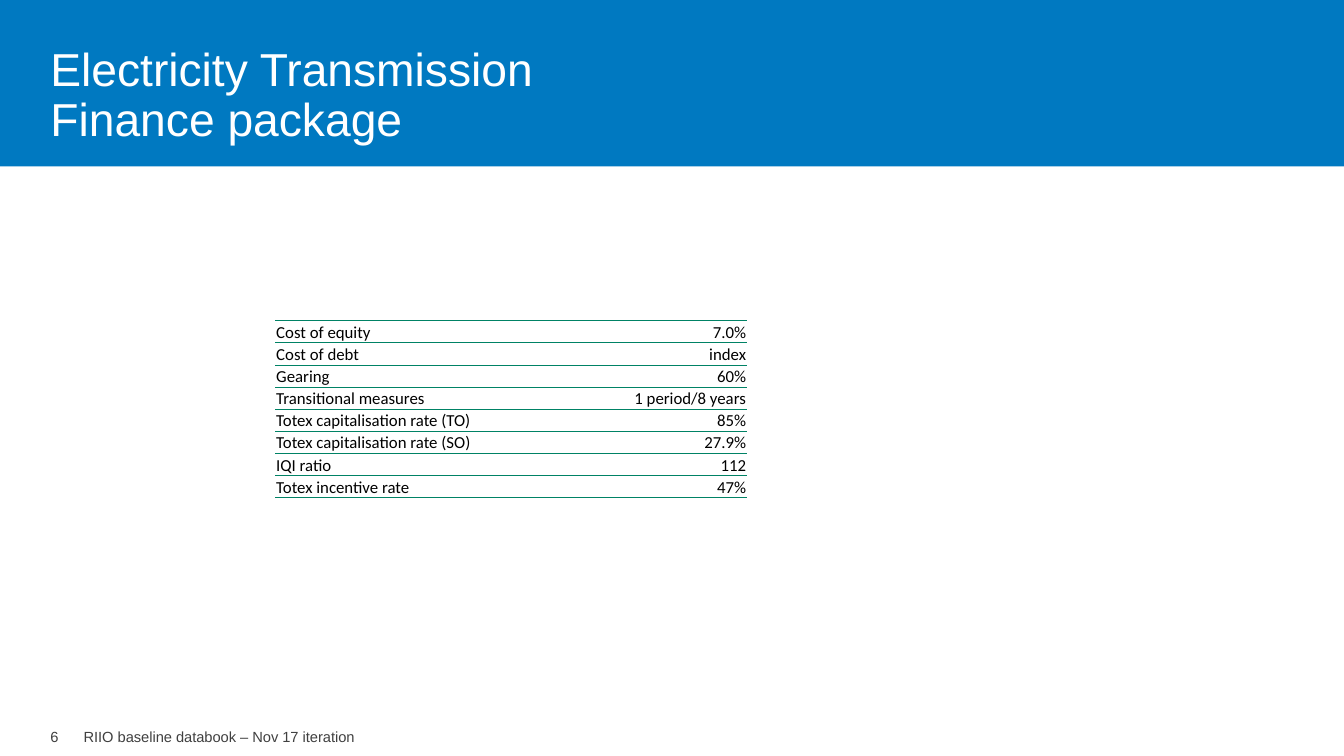
from dataclasses import dataclass

from lxml.etree import SubElement
from pptx import Presentation
from pptx.dml.color import RGBColor
from pptx.enum.shapes import MSO_SHAPE
from pptx.enum.text import MSO_ANCHOR, MSO_AUTO_SIZE, PP_ALIGN
from pptx.oxml.ns import qn
from pptx.shapes.autoshape import Shape
from pptx.slide import Slide
from pptx.table import _Cell as Cell
from pptx.text.text import TextFrame
from pptx.util import Inches, Pt

BLUE = RGBColor(0x00, 0x79, 0xC1)
GREEN = RGBColor(0x00, 0x82, 0x65)
GREY = RGBColor(0x40, 0x40, 0x40)
BLACK = RGBColor(0x00, 0x00, 0x00)
WHITE = RGBColor(0xFF, 0xFF, 0xFF)

SLIDE_WIDTH = 13.33
ROW_HEIGHT = 0.22
COLUMN_WIDTHS = (3.17, 1.51)


@dataclass
class Measure:
    """One line of the finance package."""
    label: str
    value: str


@dataclass
class FooterItem:
    """A short text at the foot of the page."""
    text: str
    left: float
    width: float


MEASURES = [
    Measure("Cost of equity", "7.0%"),
    Measure("Cost of debt", "index"),
    Measure("Gearing", "60%"),
    Measure("Transitional measures", "1 period/8 years"),
    Measure("Totex capitalisation rate (TO)", "85%"),
    Measure("Totex capitalisation rate (SO)", "27.9%"),
    Measure("IQI ratio", "112"),
    Measure("Totex incentive rate", "47%"),
]

FOOTER_ITEMS = [
    FooterItem("6", 0.5, 0.17),
    FooterItem("RIIO baseline databook – Nov 17 iteration", 0.83, 3.06),
]


def write_text(frame: TextFrame, text: str, size: float, color: RGBColor) -> None:
    """Fill a frame with unwrapped Arial text and no margins."""
    frame.text = text
    frame.word_wrap = False
    frame.auto_size = MSO_AUTO_SIZE.NONE
    frame.margin_left = frame.margin_right = 0
    frame.margin_top = frame.margin_bottom = 0
    for para in frame.paragraphs:
        para.alignment = PP_ALIGN.LEFT
        for span in para.runs:
            span.font.name = "Arial"
            span.font.size = Pt(size)
            span.font.color.rgb = color


def add_band(page: Slide) -> Shape:
    """Draw the blue band across the top."""
    band = page.shapes.add_shape(
        MSO_SHAPE.RECTANGLE, 0, 0, Inches(SLIDE_WIDTH), Inches(1.65))
    band.shadow.inherit = False
    band.fill.solid()
    band.fill.fore_color.rgb = BLUE
    band.line.fill.background()
    return band


def format_title(page: Slide) -> None:
    """Place the title on its band."""
    title = page.shapes.title
    title.left, title.top = Inches(0.5), Inches(0.45)
    title.width, title.height = Inches(5.58), Inches(1)
    write_text(title.text_frame, "Electricity Transmission\vFinance package", 33, WHITE)
    title.text_frame.vertical_anchor = MSO_ANCHOR.BOTTOM
    title.text_frame.paragraphs[0].line_spacing = 0.9
    title.element.addprevious(add_band(page).element)


def add_footer_item(page: Slide, item: FooterItem) -> None:
    """Write one footer text."""
    box = page.shapes.add_textbox(
        Inches(item.left), Inches(7.22), Inches(item.width), Inches(0.18))
    write_text(box.text_frame, item.text, 10.5, GREY)


def set_borders(cell: Cell, top: float, bottom: float) -> None:
    """Rule a cell above and below in green, with open sides."""
    properties = cell._tc.get_or_add_tcPr()
    widths = {"a:lnL": 0, "a:lnR": 0, "a:lnT": top, "a:lnB": bottom}
    for position, (tag, width) in enumerate(widths.items()):
        line = properties.makeelement(qn(tag), {"w": str(Pt(width))})
        if width:
            fill = SubElement(line, qn("a:solidFill"))
            SubElement(fill, qn("a:srgbClr"), val=str(GREEN))
        else:
            SubElement(line, qn("a:noFill"))
        properties.insert(position, line)


def fill_cell(cell: Cell, text: str, alignment: PP_ALIGN, top: float) -> None:
    """Write and format one table cell."""
    cell.fill.solid()
    cell.fill.fore_color.rgb = WHITE
    cell.margin_left = cell.margin_right = cell.margin_top = Inches(0.01)
    cell.margin_bottom = 0
    cell.vertical_anchor = MSO_ANCHOR.BOTTOM
    cell.text_frame.text = text
    para = cell.text_frame.paragraphs[0]
    para.alignment = alignment
    span = para.runs[0]
    span.font.name = "Calibri"
    span.font.size = Pt(12)
    span.font.bold = False
    span.font.color.rgb = BLACK
    set_borders(cell, top, 0.5)


def add_finance_table(page: Slide) -> None:
    """Build the table of finance measures."""
    table = page.shapes.add_table(
        len(MEASURES), len(COLUMN_WIDTHS), Inches(2.73), Inches(3.18),
        Inches(sum(COLUMN_WIDTHS)), Inches(ROW_HEIGHT * len(MEASURES))).table
    table.first_row = table.horz_banding = False
    for column, width in zip(table.columns, COLUMN_WIDTHS):
        column.width = Inches(width)
    for index, measure in enumerate(MEASURES):
        table.rows[index].height = Inches(ROW_HEIGHT)
        top = 0.5 if index else 1
        fill_cell(table.cell(index, 0), measure.label, PP_ALIGN.LEFT, top)
        fill_cell(table.cell(index, 1), measure.value, PP_ALIGN.RIGHT, top)


def main() -> None:
    """Build and save the finance package slide."""
    deck = Presentation()
    deck.slide_width, deck.slide_height = Inches(SLIDE_WIDTH), Inches(7.5)
    page = deck.slides.add_slide(deck.slide_layouts[5])
    format_title(page)
    for item in FOOTER_ITEMS:
        add_footer_item(page, item)
    add_finance_table(page)
    deck.save("out.pptx")


if __name__ == "__main__":
    main()
